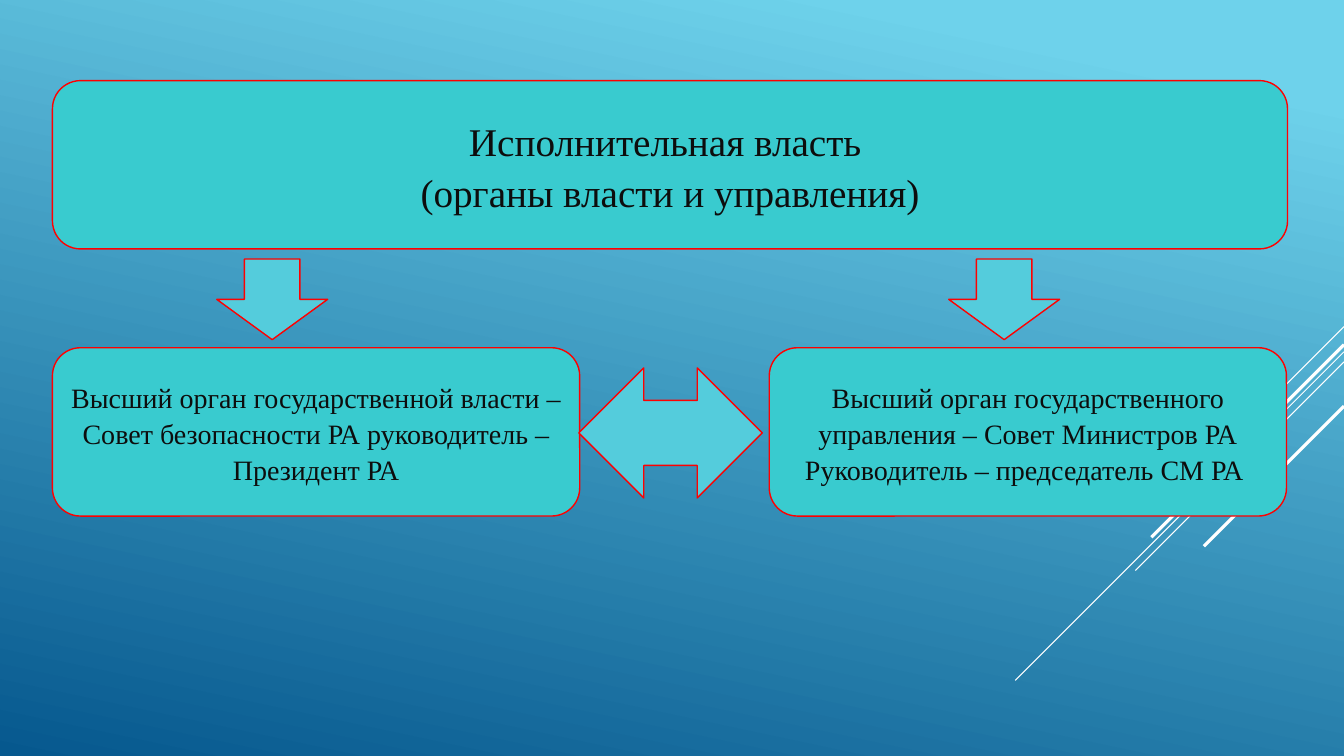
from lxml import etree
from pptx import Presentation
from pptx import util as u
from pptx.dml.color import RGBColor
from pptx.enum import shapes, text
from pptx.oxml.ns import qn

COLORS = {
    "sky": "6ED2EB",
    "deep": "06588E",
    "ray": "FFFFFF",
    "box": "39CBCF",
    "arrow": "54CCDC",
    "outline": "FF0000",
    "ink": "0D0D0D",
}
WIDTH, HEIGHT = 13.33, 7.5

deck = Presentation()
deck.slide_width, deck.slide_height = u.Inches(WIDTH), u.Inches(HEIGHT)
slide = deck.slides.add_slide(deck.slide_layouts[6])


def color(name):
    return RGBColor.from_string(COLORS[name])


def add_block(wording, *, kind, at, fill, size=20, space_after=0):
    block = slide.shapes.add_shape(kind, *(u.Inches(v) for v in at))
    block.shadow.inherit = False
    block.fill.solid()
    block.fill.fore_color.rgb = color(fill)
    block.line.color.rgb = color("outline")
    block.line.width = u.Pt(1)
    if not wording:
        return
    frame = block.text_frame
    frame.word_wrap = True
    frame.vertical_anchor = text.MSO_ANCHOR.MIDDLE
    frame.text = wording
    for paragraph in frame.paragraphs:
        paragraph.alignment = text.PP_ALIGN.CENTER
        paragraph.line_spacing = 1.07
        paragraph.space_after = u.Pt(space_after)
        font = paragraph.runs[0].font
        font.name = "Times New Roman"
        font.size = u.Pt(size)
        font.color.rgb = color("ink")


# Background gradient
backdrop = slide.background.fill
backdrop.gradient()
backdrop.gradient_angle = 360 - 102
for stop, (name, position) in zip(backdrop.gradient_stops, [("sky", 0.1), ("deep", 1)]):
    stop.color.rgb = color(name)
    stop.position = position

# Diagonal rays from the right edge: start height, reach, weight
for top, reach, weight in [
    (3.24, 1.0, 0.75),
    (3.49, 3.26, 0.75),
    (3.59, 2.07, 0.75),
    (3.42, 1.91, 2.25),
    (4.03, 1.39, 2.25),
]:
    ray = slide.shapes.add_connector(
        shapes.MSO_CONNECTOR.STRAIGHT,
        u.Inches(WIDTH), u.Inches(top), u.Inches(WIDTH - reach), u.Inches(top + reach))
    ray.line.color.rgb = color("ray")
    ray.line.width = u.Pt(weight)
    etree.SubElement(ray.element.spPr, qn("a:effectLst"))

# Branch of power and its two bodies
BOX = shapes.MSO_SHAPE.ROUNDED_RECTANGLE
LEFT, BOX_HEIGHT, BODY_TOP = 0.52, 1.67, 3.45
add_block("Исполнительная власть \n(органы власти и управления)",
          kind=BOX, at=(LEFT, 0.8, 12.25, BOX_HEIGHT), fill="box", size=28)
for left, width, body in [
    (LEFT, 5.23, "Высший орган государственной власти – Совет безопасности РА "
                 "руководитель – Президент РА"),
    (7.63, 5.13, "Высший орган государственного управления – Совет Министров РА "
                 "Руководитель – председатель СМ РА "),
]:
    add_block(body, kind=BOX, at=(left, BODY_TOP, width, BOX_HEIGHT), fill="box", space_after=8)

# Arrows between the boxes
add_block("", kind=shapes.MSO_SHAPE.LEFT_RIGHT_ARROW, at=(5.74, 3.65, 1.82, 1.29), fill="arrow")
for left in (2.15, 9.41):
    add_block("", kind=shapes.MSO_SHAPE.DOWN_ARROW, at=(left, 2.57, 1.1, 0.8), fill="arrow")

deck.save("out.pptx")
